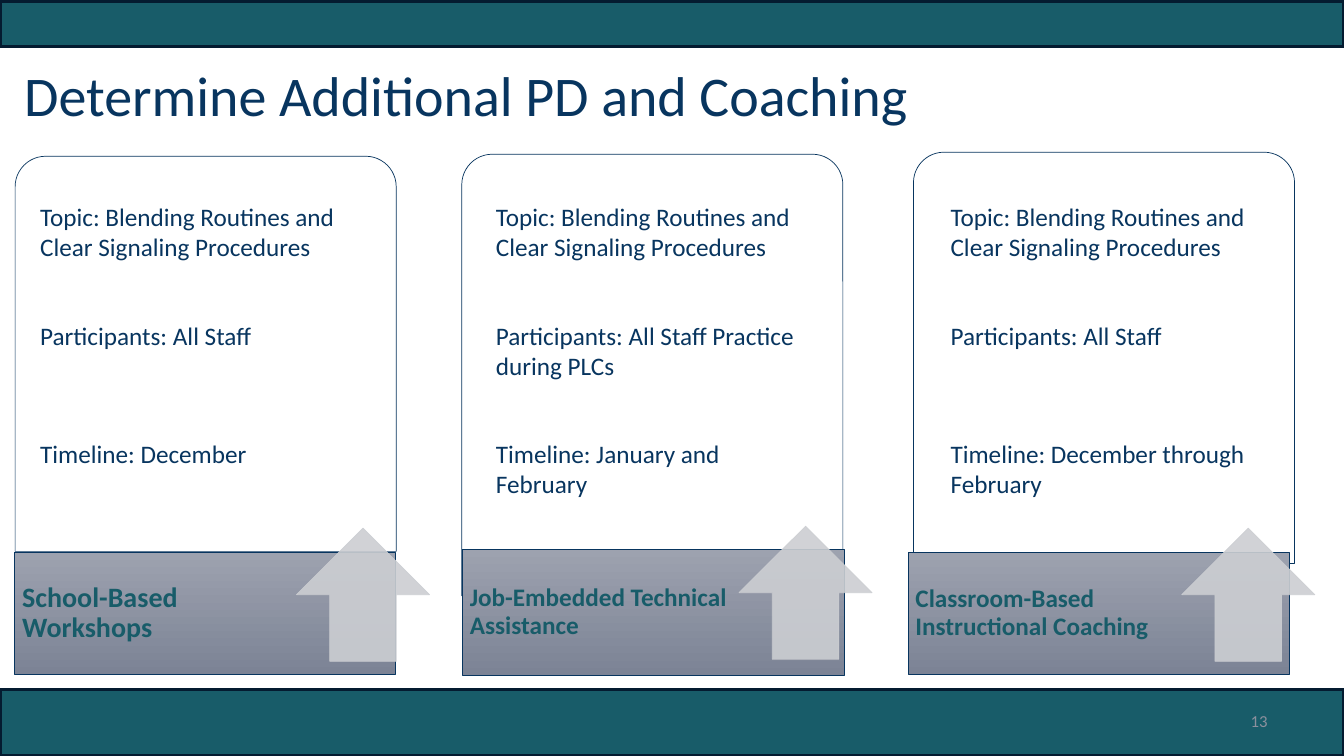
from pptx import Presentation
from pptx.dml.color import RGBColor
from pptx.enum.shapes import MSO_SHAPE
from pptx.enum.text import MSO_ANCHOR, MSO_AUTO_SIZE, PP_ALIGN
from pptx.oxml.ns import qn
from pptx.util import Inches, Pt
from lxml.etree import SubElement

COLORS = {
    "teal": "185C69",
    "edge": "041B30",
    "navy": "08355F",
    "white": "FFFFFF",
    "base_top": "9DA2AF",
    "base_bottom": "7C8395",
    "arrow": "CCCED2",
    "number": "8C909D",
}
FONT = "Calibri"
CARD_WIDTH = 3.78
LABEL_WIDTH = 2.66
ARROW_SIZE = 1.32
NOTE_TOP = 1.95
NOTE_STEP = 1.175
TOPIC = "Topic: Blending Routines and Clear Signaling Procedures"

COLUMNS = [
    {
        "card": (0.15, 1.55, 3.92),
        "base": (0.14, 5.48, 1.21),
        "arrow": (2.94, 5.24),
        "notes": (0.3, 3.37),
        "label": "School-Based Workshops",
        "label_size": 20,
        "label_inset": 0.08,
        "lines": [TOPIC, "Participants: All Staff", "Timeline: December"],
    },
    {
        "card": (4.58, 1.53, 4.38),
        "base": (4.59, 5.45, 1.25),
        "arrow": (7.33, 5.22),
        "notes": (4.82, 3.37),
        "label": "Job-Embedded Technical Assistance",
        "label_size": 18,
        "label_inset": 0.07,
        "lines": [
            TOPIC,
            "Participants: All Staff Practice during PLCs",
            "Timeline: January and February",
        ],
    },
    {
        "card": (9.06, 1.51, 4.08),
        "base": (9.01, 5.48, 1.21),
        "arrow": (11.72, 5.24),
        "notes": (9.33, 3.3),
        "label": "Classroom-Based Instructional Coaching",
        "label_size": 18,
        "label_inset": 0.07,
        "lines": [
            TOPIC,
            "Participants: All Staff",
            "Timeline: December through February",
        ],
    },
]


def color(name):
    return RGBColor.from_string(COLORS[name])


def set_opacity(fill_parent, percent):
    for color_element in fill_parent.findall(f"{qn('a:solidFill')}/{qn('a:srgbClr')}"):
        SubElement(color_element, qn("a:alpha"), val=str(percent * 1000))


def add_box(slide, kind, box, fill, line, line_width):
    shape = slide.shapes.add_shape(kind, *map(Inches, box))
    shape.shadow.inherit = False
    shape.fill.solid()
    shape.fill.fore_color.rgb = color(fill)
    shape.line.color.rgb = color(line)
    shape.line.width = Pt(line_width)
    return shape


def format_paragraph(paragraph, size, color_name, bold=False):
    paragraph.font.name = FONT
    paragraph.font.size = Pt(size)
    paragraph.font.bold = bold
    paragraph.font.color.rgb = color(color_name)


def add_text(slide, box, text, size, color_name, bold=False):
    text_box = slide.shapes.add_textbox(*map(Inches, box))
    frame = text_box.text_frame
    frame.word_wrap = True
    frame.text = text
    format_paragraph(frame.paragraphs[0], size, color_name, bold)
    return frame


def add_bands(slide):
    for top, height in ((6.84, 0.66), (0.01, 0.45)):
        add_box(slide, MSO_SHAPE.RECTANGLE, (0, top, 13.33, height), "teal", "edge", 2.5)


def add_title(slide, box, text):
    title = slide.shapes.title
    title.left, title.top, title.width, title.height = map(Inches, box)
    frame = title.text_frame
    frame.text = text
    frame.vertical_anchor = MSO_ANCHOR.TOP
    frame.margin_top = Inches(0.08)
    paragraph = frame.paragraphs[0]
    paragraph.alignment = PP_ALIGN.LEFT
    paragraph.line_spacing = 0.9
    format_paragraph(paragraph, 40, "navy")


def add_base(slide, left, top, height, column):
    base = add_box(slide, MSO_SHAPE.RECTANGLE, (left, top, CARD_WIDTH, height), "base_top", "navy", 0.5)
    base.fill.gradient()
    base.fill.gradient_angle = 270
    for stop, name in zip(base.fill.gradient_stops, ("base_top", "base_bottom")):
        stop.color.rgb = color(name)
    frame = add_text(
        slide, (left, top, LABEL_WIDTH, height), column["label"], column["label_size"], "teal", True
    )
    frame.vertical_anchor = MSO_ANCHOR.MIDDLE
    frame.margin_left = Inches(column["label_inset"])
    frame.margin_right = Inches(0.03)
    frame.margin_top = frame.margin_bottom = 0
    frame.paragraphs[0].line_spacing = 0.9


def add_column(slide, column):
    left, top, height = column["card"]
    card = add_box(
        slide, MSO_SHAPE.ROUND_2_SAME_RECTANGLE, (left, top, CARD_WIDTH, height), "white", "navy", 0.5
    )
    card.adjustments[0] = 0.08
    card.adjustments[1] = 0
    set_opacity(card.element.spPr, 90)

    add_base(slide, *column["base"], column)

    arrow_box = (*column["arrow"], ARROW_SIZE, ARROW_SIZE)
    arrow = add_box(slide, MSO_SHAPE.UP_ARROW, arrow_box, "arrow", "arrow", 0.5)
    set_opacity(arrow.element.spPr, 90)
    set_opacity(arrow.element.spPr.find(qn("a:ln")), 90)

    note_left, note_width = column["notes"]
    for index, line in enumerate(column["lines"]):
        note_top = NOTE_TOP + index * NOTE_STEP
        note_height = 0.71 if len(line) > 25 else 0.4
        frame = add_text(slide, (note_left, note_top, note_width, note_height), line, 18, "navy")
        frame.auto_size = MSO_AUTO_SIZE.SHAPE_TO_FIT_TEXT


def add_slide_number(slide, box, text):
    frame = add_text(slide, box, text, 12, "number")
    frame.vertical_anchor = MSO_ANCHOR.MIDDLE
    frame.paragraphs[0].alignment = PP_ALIGN.RIGHT


def main():
    presentation = Presentation()
    presentation.slide_width = Inches(13.33)
    presentation.slide_height = Inches(7.5)
    slide = presentation.slides.add_slide(presentation.slide_layouts[5])
    add_bands(slide)
    add_title(slide, (0.14, 0.6, 10.56, 1.35), "Determine Additional PD and Coaching")
    for column in COLUMNS:
        add_column(slide, column)
    add_slide_number(slide, (9.56, 6.95, 3.11, 0.4), "13")
    presentation.save("out.pptx")


if __name__ == "__main__":
    main()
